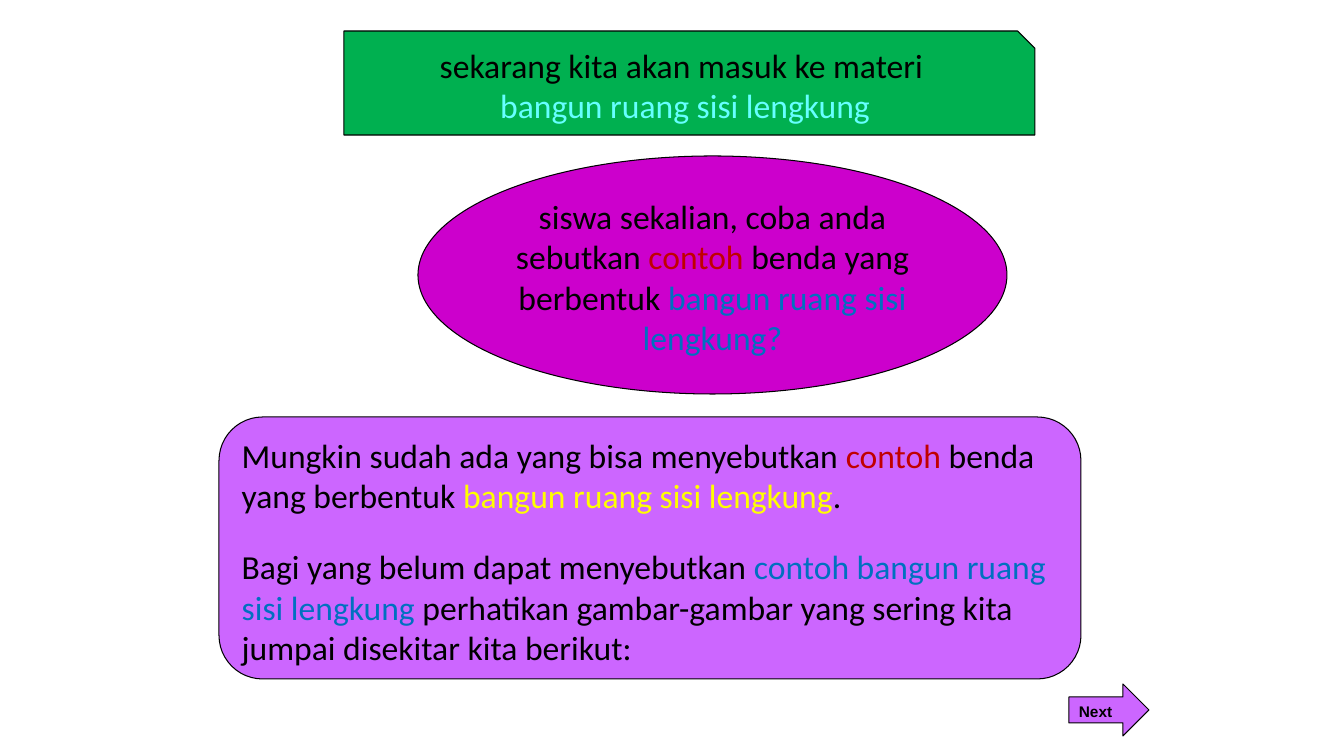
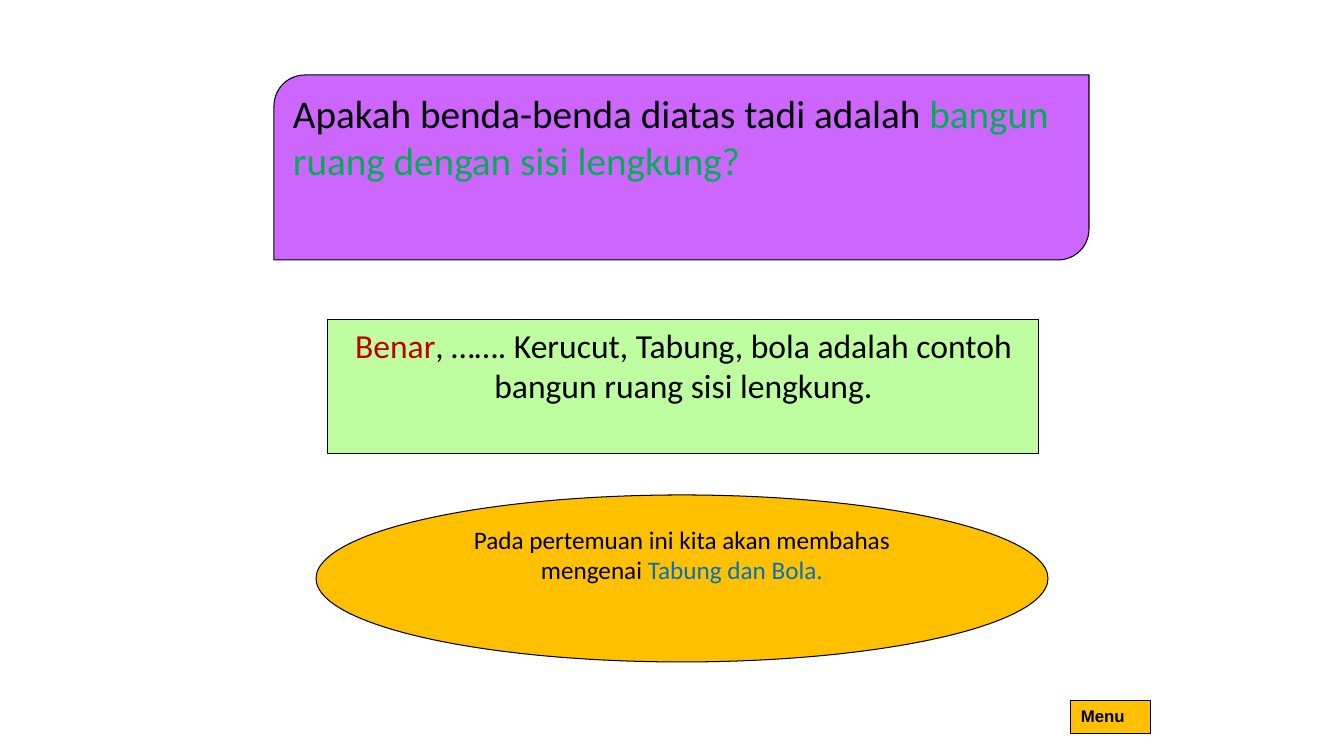
import pptx
import pptx.util
import pptx.dml.color
import pptx.enum.shapes
import pptx.enum.text

RGBColor = pptx.dml.color.RGBColor
SHAPE = pptx.enum.shapes.MSO_SHAPE
LEFT = pptx.enum.text.PP_ALIGN.LEFT
CENTER = pptx.enum.text.PP_ALIGN.CENTER

# Shared colours
BLACK = RGBColor(0x00, 0x00, 0x00)
GREEN = RGBColor(0x00, 0xB0, 0x50)
PALE_GREEN = RGBColor(0xBF, 0xFE, 0xA0)
AQUA = RGBColor(0x66, 0xFF, 0xFF)
VIOLET = RGBColor(0xCC, 0x66, 0xFF)
MAGENTA = RGBColor(0xCC, 0x00, 0xCC)
RED = RGBColor(0xC0, 0x00, 0x00)
BLUE = RGBColor(0x00, 0x70, 0xC0)
YELLOW = RGBColor(0xFF, 0xFF, 0x00)
ORANGE = RGBColor(0xFF, 0xC0, 0x00)

EMU_PER_PX = 12192000 / 1344
PARAGRAPH_GAP = pptx.util.Pt(22)


def px(length):
    return pptx.util.Emu(round(length * EMU_PER_PX))


def add_panel(slide, kind, box, fill, paragraphs, size, align=CENTER,
              font="Calibri", bold=False, gap=0):
    """Outlined shape with top-anchored text; each run is (text, colour)."""
    panel = slide.shapes.add_shape(kind, *[px(length) for length in box])
    panel.shadow.inherit = False
    panel.fill.solid()
    panel.fill.fore_color.rgb = fill
    panel.line.color.rgb = BLACK
    panel.line.width = pptx.util.Pt(0.75)
    frame = panel.text_frame
    frame.word_wrap = True
    frame.vertical_anchor = pptx.enum.text.MSO_ANCHOR.TOP
    for index, runs in enumerate(paragraphs):
        paragraph = frame.add_paragraph() if index else frame.paragraphs[0]
        paragraph.alignment = align
        if index and gap:
            paragraph.space_before = gap
        for text, colour in runs:
            run = paragraph.add_run()
            run.text = text
            run.font.name = font
            run.font.size = pptx.util.Pt(size)
            run.font.bold = bold
            run.font.color.rgb = colour


deck = pptx.Presentation()
deck.slide_width = px(1344)
deck.slide_height = px(756)
blank = deck.slide_layouts[6]

# Slide 1: introduction to the topic
intro = deck.slides.add_slide(blank)
add_panel(intro, SHAPE.SNIP_1_RECTANGLE, (344, 31, 691, 104), GREEN, [
    [("sekarang kita akan masuk ke materi ", BLACK)],
    [("bangun ruang sisi lengkung", AQUA)],
], 24)
add_panel(intro, SHAPE.ROUNDED_RECTANGLE, (219, 417, 862, 262), VIOLET, [
    [("Mungkin sudah ada yang bisa menyebutkan ", BLACK),
     ("contoh ", RED),
     ("benda yang berbentuk ", BLACK),
     ("bangun ruang sisi lengkung", YELLOW),
     (".", BLACK)],
    [("Bagi yang belum dapat menyebutkan ", BLACK),
     ("contoh bangun ruang sisi lengkung ", BLUE),
     ("perhatikan gambar-gambar yang sering kita jumpai disekitar kita berikut:", BLACK)],
], 24, LEFT, gap=PARAGRAPH_GAP)
add_panel(intro, SHAPE.OVAL, (418, 156, 589, 238), MAGENTA, [
    [("siswa sekalian, coba anda sebutkan ", BLACK),
     ("contoh ", RED),
     ("benda yang berbentuk ", BLACK),
     ("bangun ruang sisi lengkung?", BLUE)],
], 24)
add_panel(intro, SHAPE.RIGHT_ARROW, (1069, 684, 80, 52), VIOLET,
          [[("Next", BLACK)]], 11, LEFT, "Arial", True)

# Slide 2: question, answer and plan of the lesson
answer = deck.slides.add_slide(blank)
add_panel(answer, SHAPE.ROUND_2_DIAG_RECTANGLE, (274, 75, 815, 185), VIOLET, [
    [("Apakah benda-benda diatas tadi adalah ", BLACK),
     ("bangun ruang dengan sisi lengkung?", GREEN)],
], 28, LEFT)
add_panel(answer, SHAPE.OVAL, (316, 495, 732, 167), ORANGE, [
    [("Pada pertemuan ini kita akan membahas mengenai ", BLACK),
     ("Tabung dan Bola.", BLUE)],
], 18)
add_panel(answer, SHAPE.RECTANGLE, (328, 320, 711, 134), PALE_GREEN, [
    [("Benar", RED),
     (", ……. Kerucut, Tabung, bola adalah contoh bangun ruang sisi lengkung.", BLACK)],
], 24)
add_panel(answer, SHAPE.RECTANGLE, (1071, 701, 80, 33), ORANGE,
          [[("Menu", BLACK)]], 12, LEFT, "Arial", True)

deck.save("out.pptx")
